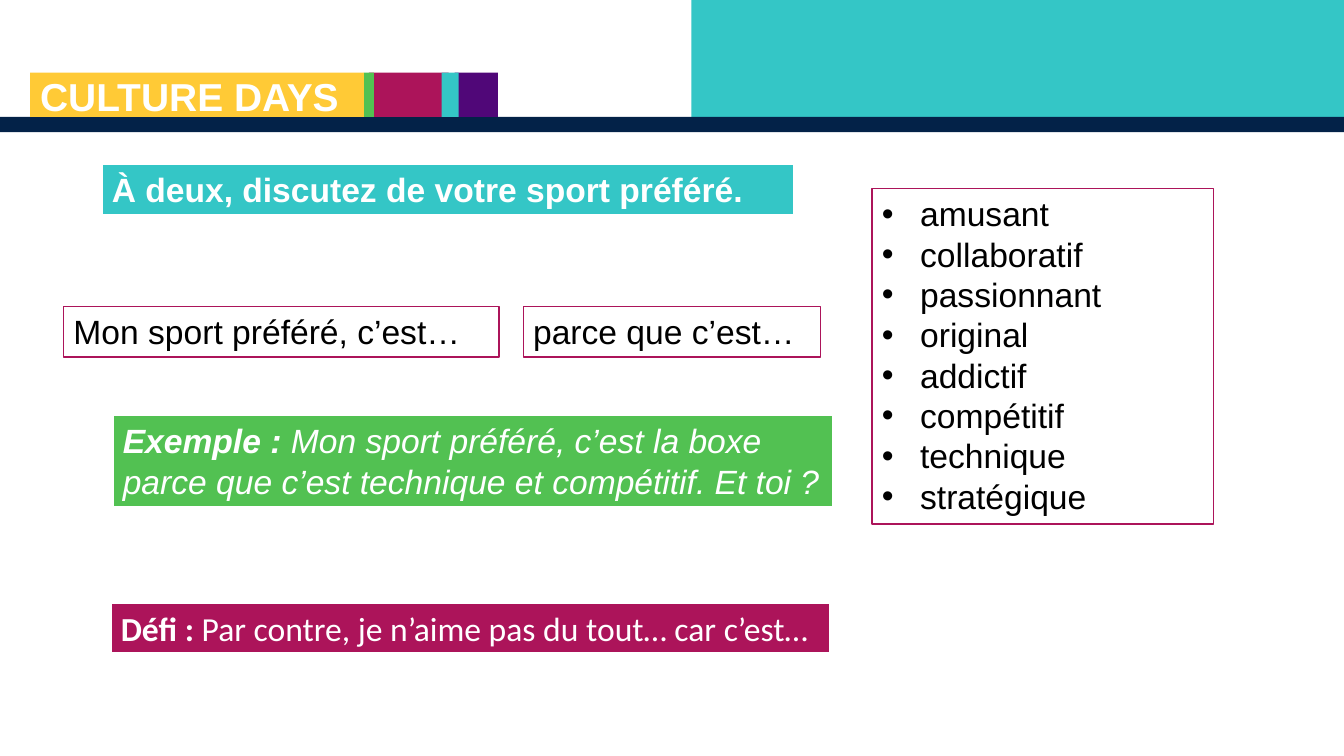
from dataclasses import dataclass

import lxml.etree
import pptx
import pptx.dml.color
import pptx.enum.shapes
import pptx.enum.text
import pptx.oxml.ns
import pptx.shapes.autoshape
import pptx.slide
import pptx.text.text
import pptx.util


@dataclass(frozen=True)
class Theme:
    white: str = "FFFFFF"
    black: str = "000000"
    navy: str = "032248"
    teal: str = "34C6C6"
    plum: str = "AC145A"
    violet: str = "500778"
    green: str = "52C152"
    gold: str = "FFCA36"
    font: str = "Arial"
    alt: str = "Calibri"
    head: float = 27.8
    body: float = 24
    thin: float = 1
    thick: float = 1.5


@dataclass(frozen=True)
class Area:
    left: float
    top: float
    width: float
    height: float


@dataclass(frozen=True)
class Run:
    text: str
    bold: bool = False


@dataclass(frozen=True)
class Band:
    area: Area
    fill: str


@dataclass(frozen=True)
class Card:
    area: Area
    lines: tuple[tuple[Run, ...], ...]
    fill: str = Theme.white
    edge: str = Theme.plum
    weight: float = Theme.thin
    color: str = Theme.black
    font: str = Theme.font
    slant: bool = False
    bullet: bool = False


WIDE = pptx.util.Inches(13.333)
HIGH = pptx.util.Inches(7.5)
STRIPE = 9.6
DEEP = 5.87
ROW = 6.67
WORDS = ("amusant", "collaboratif", "passionnant", "original",
         "addictif", "compétitif", "technique", "stratégique")

BANDS = (
    Band(Area(51.45, 0, 48.55, 15.47), Theme.teal),
    Band(Area(0, 15.47, 100, 2), Theme.navy),
    Band(Area(33.83, STRIPE, 3.22, DEEP), Theme.violet),
    Band(Area(27.45, STRIPE, 5.93, DEEP), Theme.plum),
    Band(Area(32.85, STRIPE, 1.28, DEEP), Theme.teal),
    Band(Area(27.08, STRIPE, 0.75, DEEP), Theme.green),
    Band(Area(2.25, STRIPE, 24.83, DEEP), Theme.gold),
)

VIVID = dict(edge=Theme.white, weight=Theme.thick, color=Theme.white)
CARDS = (
    Card(Area(7.58, 21.73, 51.53, ROW),
         ((Run("À deux, discutez de votre sport préféré.", True),),),
         fill=Theme.teal, **VIVID),
    Card(Area(4.73, 40.53, 32.4, ROW), ((Run("Mon sport préféré, c’est…"),),)),
    Card(Area(38.93, 40.53, 22.13, ROW), ((Run("parce que c’est…"),),)),
    Card(Area(64.88, 24.93, 25.43, 44.4),
         tuple((Run(word),) for word in WORDS), bullet=True),
    Card(Area(8.4, 54.93, 53.55, 12.13),
         ((Run("Exemple :", True),
           Run(" Mon sport préféré, c’est la boxe parce que c’est technique "
               "et compétitif. Et toi ?")),),
         fill=Theme.green, slant=True, **VIVID),
    Card(Area(8.25, 79.73, 53.55, ROW),
         ((Run("Défi : ", True),
           Run("Par contre, je n’aime pas du tout… car c’est…")),),
         fill=Theme.plum, font=Theme.alt, **VIVID),
)


def place(area: Area) -> tuple[int, int, int, int]:
    return (round(area.left * WIDE / 100), round(area.top * HIGH / 100),
            round(area.width * WIDE / 100), round(area.height * HIGH / 100))


def tint(code: str) -> pptx.dml.color.RGBColor:
    return pptx.dml.color.RGBColor.from_string(code)


def block(slide: pptx.slide.Slide, area: Area, fill: str, edge: str = "",
          weight: float = 0) -> pptx.shapes.autoshape.Shape:
    shape = slide.shapes.add_shape(
        pptx.enum.shapes.MSO_SHAPE.RECTANGLE, *place(area))
    shape.shadow.inherit = False
    shape.fill.solid()
    shape.fill.fore_color.rgb = tint(fill)
    if edge:
        shape.line.color.rgb = tint(edge)
        shape.line.width = pptx.util.Pt(weight)
    else:
        shape.line.fill.background()
    return shape


def dot(para: pptx.text.text._Paragraph) -> None:
    props = para._p.get_or_add_pPr()
    indent = pptx.util.Inches(0.38)
    props.set("marL", str(indent))
    props.set("indent", str(-indent))
    for tag, key, value in (("a:buFont", "typeface", Theme.font),
                            ("a:buChar", "char", "•")):
        lxml.etree.SubElement(props, pptx.oxml.ns.qn(tag)).set(key, value)


def write(frame: pptx.text.text.TextFrame, lines: tuple[tuple[Run, ...], ...],
          *, color: str, font: str = Theme.font, size: float = Theme.body,
          slant: bool = False, bullet: bool = False, space: float = 1,
          anchor: pptx.enum.text.MSO_ANCHOR = pptx.enum.text.MSO_ANCHOR.TOP) -> None:
    frame.word_wrap = True
    frame.vertical_anchor = anchor
    for index, line in enumerate(lines):
        para = frame.add_paragraph() if index else frame.paragraphs[0]
        para.alignment = pptx.enum.text.PP_ALIGN.LEFT
        para.line_spacing = space
        if bullet:
            dot(para)
        for part in line:
            run = para.add_run()
            run.text = part.text
            run.font.name = font
            run.font.size = pptx.util.Pt(size)
            run.font.bold = part.bold
            run.font.italic = slant
            run.font.color.rgb = tint(color)


def main() -> None:
    deck = pptx.Presentation()
    deck.slide_width, deck.slide_height = WIDE, HIGH
    slide = deck.slides.add_slide(deck.slide_layouts[6])
    for band in BANDS:
        block(slide, band.area, band.fill)
    title = slide.shapes.add_textbox(*place(Area(2.25, 10, 31.13, 6.4)))
    write(title.text_frame, ((Run("CULTURE DAYS", True),),),
          color=Theme.white, size=Theme.head, space=0.8,
          anchor=pptx.enum.text.MSO_ANCHOR.BOTTOM)
    for card in CARDS:
        shape = block(slide, card.area, card.fill, card.edge, card.weight)
        write(shape.text_frame, card.lines, color=card.color, font=card.font,
              slant=card.slant, bullet=card.bullet)
        shape.text_frame.auto_size = pptx.enum.text.MSO_AUTO_SIZE.SHAPE_TO_FIT_TEXT
    deck.save("out.pptx")


if __name__ == "__main__":
    main()
